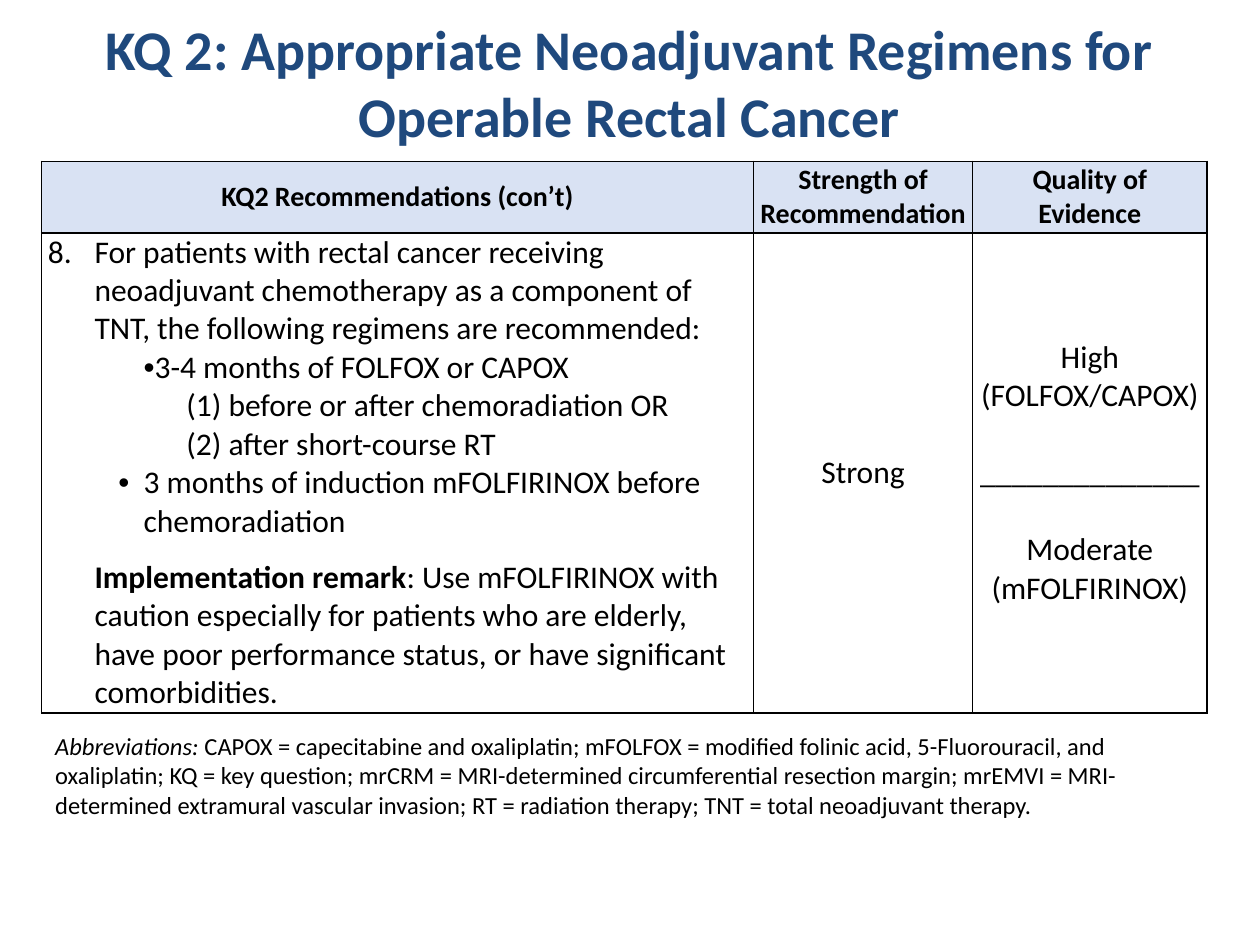
from lxml import etree
from pptx import Presentation
from pptx.dml.color import RGBColor
from pptx.enum.text import MSO_ANCHOR, PP_ALIGN
from pptx.oxml.ns import qn
from pptx.util import Inches, Pt

BLACK = RGBColor(0x00, 0x00, 0x00)
NAVY = RGBColor(0x1F, 0x49, 0x7D)
PALE = RGBColor(0xD9, 0xE2, 0xF3)
FONT = "Calibri"
CENTER = PP_ALIGN.CENTER
LEFT = PP_ALIGN.LEFT
MIDDLE = MSO_ANCHOR.MIDDLE
TOP = MSO_ANCHOR.TOP

COLS = (5.65, 1.74, 1.86)
ROWS = (0.57, 3.81)
HEADS = ("KQ2 Recommendations (con’t)", "Strength of Recommendation",
         "Quality of Evidence")
REMARK = (": Use mFOLFIRINOX with caution especially for patients who are "
          "elderly, have poor performance status, or have significant "
          "comorbidities.")
ADVICE = (
    ("8.\tFor patients with rectal cancer receiving neoadjuvant chemotherapy "
     "as a component of TNT, the following regimens are recommended:",
     0.37, -0.37, False),
    ("3-4 months of FOLFOX or CAPOX", 0.56, 0.2, True),
    ("(1) before or after chemoradiation OR", 1.1, 0, False),
    ("(2) after short-course RT", 1.1, 0, False),
    ("3 months of induction mFOLFIRINOX before chemoradiation",
     0.76, -0.2, True),
    ("Implementation remark", 0.37, 0, False),
)
GRADES = (("High", 0), ("(FOLFOX/CAPOX)", 0), ("______________", 22),
          ("Moderate", 22), ("(mFOLFIRINOX)", 0))
TERMS = (" CAPOX = capecitabine and oxaliplatin; mFOLFOX = modified folinic "
         "acid, 5-Fluorouracil, and oxaliplatin; KQ = key question; mrCRM = "
         "MRI-determined circumferential resection margin; mrEMVI = "
         "MRI-determined extramural vascular invasion; RT = radiation "
         "therapy; TNT = total neoadjuvant therapy.")


def style(para, size, color=BLACK, bold=False, align=CENTER):
    """Format a paragraph and all its runs."""
    para.alignment = align
    for run in para.runs:
        font = run.font
        font.name, font.size, font.bold = FONT, Pt(size), bold
        font.color.rgb = color


def indent(para, left, first, dot=False):
    """Set the indents of a paragraph and its bullet, if any."""
    props = para._p.get_or_add_pPr()
    props.set("marL", str(Inches(left)))
    props.set("indent", str(Inches(first)))
    if dot:
        etree.SubElement(props, qn("a:buFont"), typeface="Arial")
        etree.SubElement(props, qn("a:buChar"), char="•")
    else:
        etree.SubElement(props, qn("a:buNone"))


def add_para(frame, index):
    """Return the first paragraph of a frame or a new one."""
    return frame.add_paragraph() if index else frame.paragraphs[0]


def add_box(slide, box):
    """Add a wrapping text box and return its frame."""
    frame = slide.shapes.add_textbox(*map(Inches, box)).text_frame
    frame.word_wrap = True
    return frame


def add_title(slide, box):
    """Place the slide title."""
    frame = add_box(slide, box)
    frame.vertical_anchor = MIDDLE
    frame.text = ("KQ 2: Appropriate Neoadjuvant Regimens for "
                  "Operable Rectal Cancer")
    style(frame.paragraphs[0], 32, NAVY, True)


def set_cell(cell, fill, anchor):
    """Set the margins, borders and fill of a cell."""
    cell.margin_left = cell.margin_right = Inches(0.05)
    cell.margin_top = cell.margin_bottom = 0
    cell.vertical_anchor = anchor
    props = cell._tc.get_or_add_tcPr()
    for side in ("lnL", "lnR", "lnT", "lnB"):
        line = etree.SubElement(props, qn(f"a:{side}"), w=str(Pt(1)))
        solid = etree.SubElement(line, qn("a:solidFill"))
        etree.SubElement(solid, qn("a:srgbClr"), val=str(BLACK))
    if fill is None:
        cell.fill.background()
    else:
        cell.fill.solid()
        cell.fill.fore_color.rgb = fill


def fill_advice(frame):
    """Write the recommendation and its remark."""
    for i, (text, left, first, dot) in enumerate(ADVICE):
        para = add_para(frame, i)
        para.text = text
        indent(para, left, first, dot)
        style(para, 18, align=LEFT)
    para.space_before = Pt(10)
    para.add_run().text = REMARK
    style(para, 18, align=LEFT)
    para.runs[0].font.bold = True


def fill_grades(frame):
    """Write the quality grades."""
    for i, (text, gap) in enumerate(GRADES):
        para = add_para(frame, i)
        para.text = text
        if gap:
            para.space_before = Pt(gap)
        style(para, 18)


def add_grid(slide, box):
    """Place the table of recommendations."""
    shape = slide.shapes.add_table(len(ROWS), len(COLS), *map(Inches, box))
    table = shape.table
    table.first_row = table.horz_banding = False
    for row, height in zip(table.rows, ROWS):
        row.height = Inches(height)
    for i, (width, head) in enumerate(zip(COLS, HEADS)):
        table.columns[i].width = Inches(width)
        top, body = table.cell(0, i), table.cell(1, i)
        set_cell(top, PALE, MIDDLE)
        set_cell(body, None, MIDDLE if i else TOP)
        top.text_frame.text = head
        style(top.text_frame.paragraphs[0], 16, bold=True)
    fill_advice(table.cell(1, 0).text_frame)
    strength = table.cell(1, 1).text_frame
    strength.text = "Strong"
    style(strength.paragraphs[0], 18)
    fill_grades(table.cell(1, 2).text_frame)


def add_notes(slide, box):
    """Place the list of abbreviations."""
    frame = add_box(slide, box)
    frame.margin_top = Inches(0.29)
    para = frame.paragraphs[0]
    para.text = "Abbreviations:"
    para.add_run().text = TERMS
    indent(para, 0.06, 0)
    style(para, 14, align=LEFT)
    para.runs[0].font.italic = True


def main():
    """Build and save the slide."""
    deck = Presentation()
    deck.slide_width, deck.slide_height = Inches(10), Inches(7.5)
    slide = deck.slides.add_slide(deck.slide_layouts[6])
    add_title(slide, (0.37, 0.06, 9.25, 1.18))
    add_grid(slide, (0.33, 1.28, sum(COLS), sum(ROWS)))
    add_notes(slide, (0.28, 5.51, 9.34, 1.04))
    deck.save("out.pptx")


if __name__ == "__main__":
    main()
